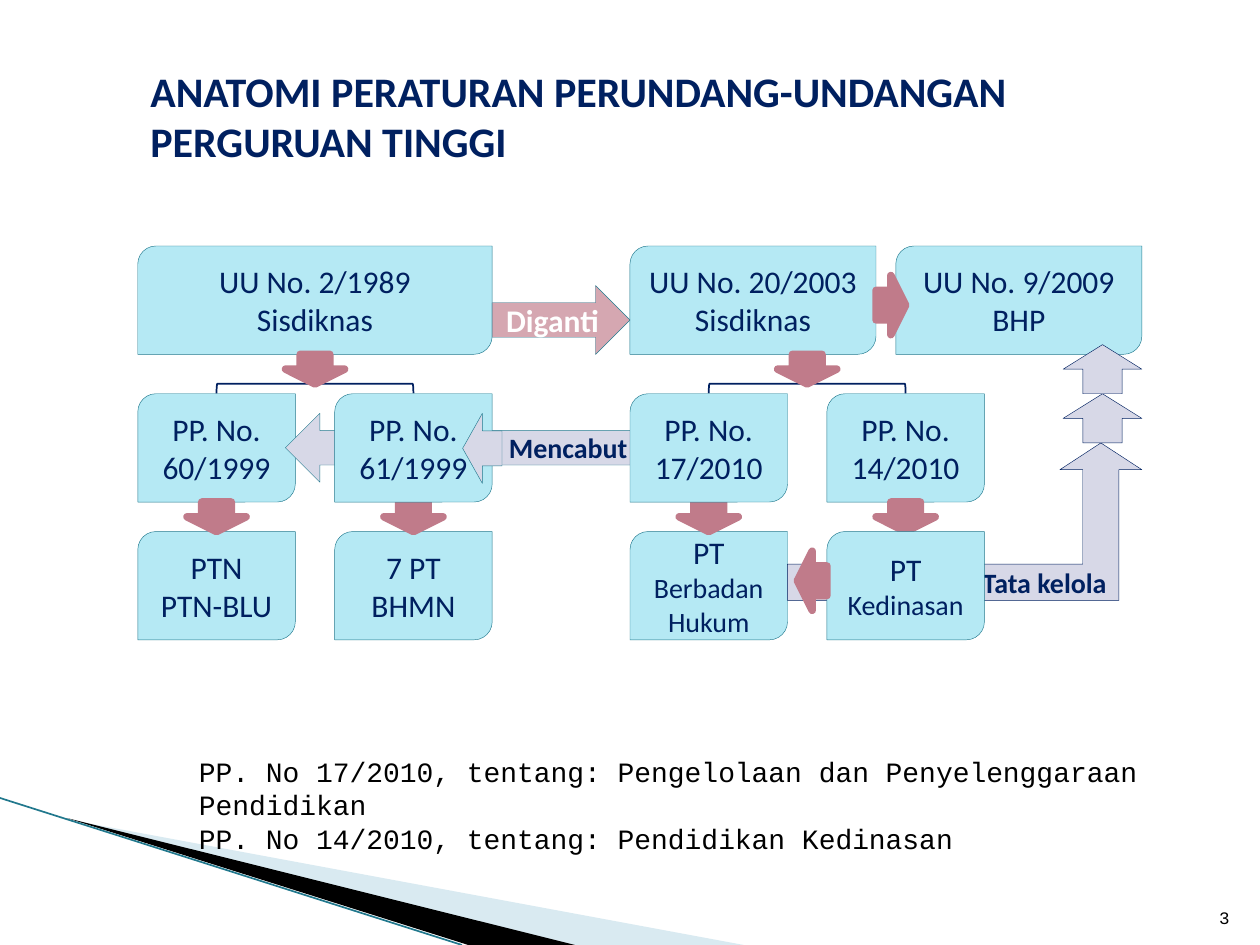
"""Builds the slide on the anatomy of Indonesian higher-education regulations."""
from lxml.etree import SubElement
from pptx import Presentation
from pptx.dml.color import RGBColor
from pptx.enum.shapes import MSO_CONNECTOR, MSO_SHAPE as SHP
from pptx.enum.text import MSO_ANCHOR as ANC, MSO_AUTO_SIZE as AUTO, PP_ALIGN as AL
from pptx.oxml.ns import qn
from pptx.util import Pt

C = {"navy": "002060", "box": "B5E9F4", "teal": "21788D", "rose": "C07B8A",
     "pink": "D5A7B1", "lilac": "D7D8E7", "pale": "D9EAF1", "black": "000000",
     "white": "FFFFFF"}
STYLES = {"box": ("box", "teal", 0.25), "step": ("rose", "rose", 4.33),
          "replace": ("pink", "teal", 0.25), "revoke": ("lilac", "teal", 0.25),
          "govern": ("lilac", "navy", 0.25), "bracket": (None, "navy", 1)}
BODY = {"name": "Calibri", "size": 18, "color": "navy"}
LABEL = BODY | {"size": 16, "bold": True}
NOTE = {"name": "Courier New", "size": 16, "color": "black"}


def write(tf, paras, fmt, align, anchor):
    """Fill a text frame; a run is a string or a (string, size) pair."""
    frame = {"word_wrap": True, "auto_size": AUTO.NONE, "vertical_anchor": anchor}
    for key, value in frame.items():
        setattr(tf, key, value)
    for i, runs in enumerate(paras):
        p = tf.add_paragraph() if i else tf.paragraphs[0]
        p.alignment = align
        for run in runs if isinstance(runs, list) else [runs]:
            text, size = run if isinstance(run, tuple) else (run, fmt["size"])
            r = p.add_run()
            r.text = text
            for key, value in (fmt | {"size": Pt(size)}).items():
                if key == "color":
                    r.font.color.rgb = RGBColor.from_string(C[value])
                else:
                    setattr(r.font, key, value)


def add(kind, style, x, y, w, h, paras=(), fmt=BODY, align=AL.CENTER, rot=0):
    """Add one styled preset shape, measured in points."""
    sp = s.shapes.add_shape(kind, Pt(x), Pt(y), Pt(w), Pt(h))
    fill, line, width = STYLES[style]
    sp.shadow.inherit = False
    sp.rotation = rot
    if fill:
        sp.fill.solid()
        sp.fill.fore_color.rgb = RGBColor.from_string(C[fill])
    else:
        sp.fill.background()
    sp.line.color.rgb = RGBColor.from_string(C[line])
    sp.line.width = Pt(width)
    if paras:
        write(sp.text_frame, paras, fmt, align, ANC.MIDDLE)
    return sp


prs = Presentation()
prs.slide_width, prs.slide_height = Pt(720), Pt(540)
s = prs.slides.add_slide(prs.slide_layouts[5])

wedges = [("pale", [(39.6, 468.5), (425, 540), (328.3, 540)]),
          ("black", [(38.2, 467.5), (328.5, 540), (267.5, 540)])]
for color, points in wedges:
    corners = [(Pt(x), Pt(y)) for x, y in points]
    builder = s.shapes.build_freeform(*corners[0], scale=1.0)
    builder.add_line_segments(corners[1:], close=True)
    sp = builder.convert_to_shape()
    sp.shadow.inherit = False
    sp.fill.solid()
    sp.fill.fore_color.rgb = RGBColor.from_string(C[color])
    sp.line.fill.background()
edge = s.shapes.add_connector(MSO_CONNECTOR.STRAIGHT, 0, Pt(456), Pt(264), Pt(540))
edge.line.color.rgb = RGBColor.from_string(C["teal"])
edge.line.width = Pt(0.95)
SubElement(edge._element.spPr, qn("a:effectLst"))

title = s.shapes.title
frame = {"left": 78.75, "top": 33.8, "width": 585.4, "height": 65.5}
for key, value in frame.items():
    setattr(title, key, Pt(value))
write(title.text_frame, ["ANATOMI PERATURAN PERUNDANG-UNDANGAN PERGURUAN TINGGI"],
      BODY | {"size": 24, "bold": True}, AL.LEFT, ANC.TOP)

cols = [78.75, 191.25, 360, 472.5]
rows = [140.6, 225, 303.75]
box_w, box_h = 90, 61.9
step_w, step_h = 33.75, 16.9
box = SHP.ROUND_2_DIAG_RECTANGLE

laws = [(cols[0], 202.5, "UU No. 2/1989", "Sisdiknas"),
        (cols[2], 140.6, "UU No. 20/2003", "Sisdiknas"),
        (511.9, 140.6, "UU No. 9/2009", "BHP")]
for x, w, *lines in laws:
    add(box, "box", x, rows[0], w, box_h, lines)
add(SHP.RIGHT_ARROW, "replace", 281.25, 163.2, 78.75, 39.4, ["Diganti"],
    BODY | {"bold": True, "color": "white"})

cells = [(0, 1, ["PP. No. 60/1999"]), (3, 1, ["PP. No. 14/2010"]),
         (0, 2, ["PTN", "PTN-BLU"]), (1, 2, ["7 PT", "BHMN"]),
         (2, 2, [["PT ", ("Berbadan Hukum", 16)]])]
for col, row, lines in cells:
    add(box, "box", cols[col], rows[row], box_w, box_h, lines)

for left, right in (cols[:2], cols[2:]):
    mid = (left + right + box_w) / 2
    add(SHP.LEFT_BRACKET, "bracket", mid - 2.8, 165.8, 5.6, 112.5, rot=90)
    add(SHP.DOWN_ARROW, "step", mid - step_w / 2, 202.5, step_w, step_h)
for x in cols:
    add(SHP.DOWN_ARROW, "step", x + (box_w - step_w) / 2, 286.9, step_w, step_h)

add(SHP.LEFT_ARROW, "revoke", 163.1, 236.2, 202.5, 39.4, ["Mencabut"], LABEL, AL.RIGHT)
add(box, "box", cols[1], rows[1], box_w, box_h, ["PP. No. 61/1999"])
add(SHP.LEFT_ARROW, "revoke", 264.4, 236.2, 22.5, 40)
add(box, "box", cols[2], rows[1], box_w, box_h, ["PP. No. 17/2010"])

bent = add(SHP.BENT_UP_ARROW, "govern", 450, 253.1, 202.5, 90, ["Tata kelola"],
           LABEL, AL.RIGHT)
for i, value in enumerate((0.23, 0.26, 0.17)):
    bent.adjustments[i] = value
add(box, "box", cols[3], rows[2], box_w, box_h, ["PT", [("Kedinasan", 16)]])
for y in (225, 196.9):
    add(SHP.DOWN_ARROW, "govern", 607.5, y, 45, 28.1, rot=180)
for x, y, rot in ((447.2, 323.4, 90), (492.2, 165.9, 270)):
    add(SHP.DOWN_ARROW, "step", x, y, step_w, step_h, rot=rot)

notes = ["PP. No 17/2010, tentang: Pengelolaan dan Penyelenggaraan Pendidikan",
         "PP. No 14/2010, tentang: Pendidikan Kedinasan"]
texts = [(106.6, 427.5, 578, 62, notes, NOTE, AL.LEFT, ANC.TOP),
         (681, 505, 28.8, 28.8, ["3"], NOTE | {"size": 10}, AL.RIGHT, ANC.BOTTOM)]
for x, y, w, h, *content in texts:
    write(s.shapes.add_textbox(Pt(x), Pt(y), Pt(w), Pt(h)).text_frame, *content)

prs.save("out.pptx")
